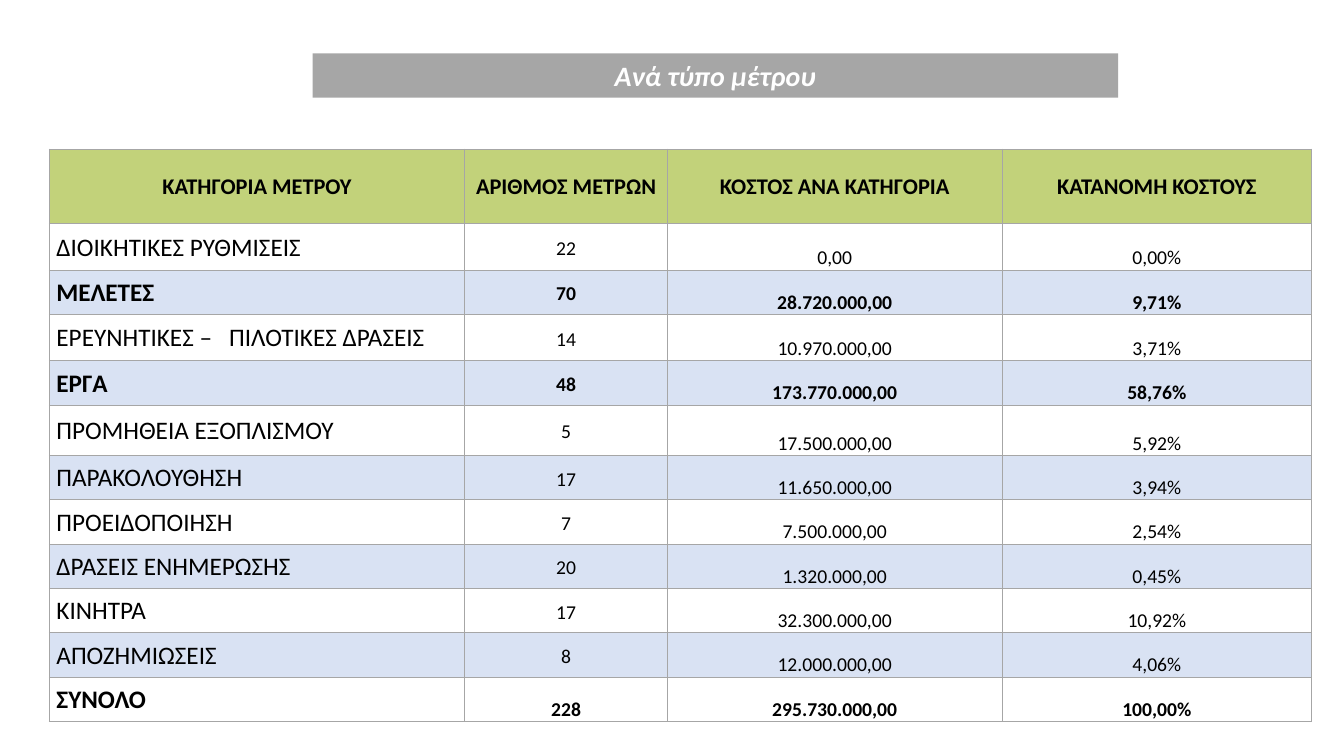
from dataclasses import dataclass

from lxml import etree
from pptx import Presentation
from pptx import util as u
from pptx.dml.color import RGBColor
from pptx.enum import text
from pptx.oxml import ns

PX = 9144  # 100 px to the inch


@dataclass(frozen=True)
class Theme:
    font: str = "Calibri"
    ink: str = "000000"
    white: str = "FFFFFF"
    grey: str = "A6A6A6"
    green: str = "8BAA00"
    blue: str = "4472C4"
    title: int = 20
    head: int = 16
    label: int = 18
    value: int = 14


@dataclass(frozen=True)
class Row:
    label: str
    count: str
    cost: str
    share: str
    high: int = 44
    bold: bool = False


@dataclass(frozen=True)
class Look:
    size: int
    bold: bool
    align: text.PP_ALIGN
    anchor: text.MSO_ANCHOR
    inset: tuple[int, int, int, int]
    loose: bool = False


THEME = Theme()
PLAIN = "{2D5ABB26-0587-4C30-8999-92F81FD0307C}"
WIDTHS = (412, 201, 332, 307)
HEADS = ("ΚΑΤΗΓΟΡΙΑ ΜΕΤΡΟΥ", "ΑΡΙΘΜΟΣ ΜΕΤΡΩΝ",
         "ΚΟΣΤΟΣ ΑΝΑ ΚΑΤΗΓΟΡΙΑ", "ΚΑΤΑΝΟΜΗ ΚΟΣΤΟΥΣ")
HEAD_HIGH = 74
GAP = "\t"  # marks a wide space inside a label
ROWS = (
    Row("ΔΙΟΙΚΗΤΙΚΕΣ ΡΥΘΜΙΣΕΙΣ", "22", "0,00", "0,00%", high=46),
    Row("ΜΕΛΕΤΕΣ", "70", "28.720.000,00", "9,71%", bold=True),
    Row("ΕΡΕΥΝΗΤΙΚΕΣ –\tΠΙΛΟΤΙΚΕΣ ΔΡΑΣΕΙΣ", "14", "10.970.000,00", "3,71%", high=46),
    Row("ΕΡΓΑ", "48", "173.770.000,00", "58,76%", bold=True),
    Row("ΠΡΟΜΗΘΕΙΑ ΕΞΟΠΛΙΣΜΟΥ", "5", "17.500.000,00", "5,92%", high=50),
    Row("ΠΑΡΑΚΟΛΟΥΘΗΣΗ", "17", "11.650.000,00", "3,94%"),
    Row("ΠΡΟΕΙΔΟΠΟΙΗΣΗ", "7", "7.500.000,00", "2,54%"),
    Row("ΔΡΑΣΕΙΣ ΕΝΗΜΕΡΩΣΗΣ", "20", "1.320.000,00", "0,45%"),
    Row("ΚΙΝΗΤΡΑ", "17", "32.300.000,00", "10,92%"),
    Row("ΑΠΟΖΗΜΙΩΣΕΙΣ", "8", "12.000.000,00", "4,06%"),
    Row("ΣΥΝΟΛΟ", "228", "295.730.000,00", "100,00%", bold=True),
)


def px(n: int) -> u.Emu:
    return u.Emu(n * PX)


def add_run(par, words: str, size: int, color: str, bold: bool, slant: bool = False):
    run = par.add_run()
    run.text = words
    font = run.font
    font.name, font.size = THEME.font, u.Pt(size)
    font.bold, font.italic = bold, slant
    font.color.rgb = RGBColor.from_string(color)
    return run


def tint(cell, color: str, alpha: int) -> None:
    cell.fill.solid()
    cell.fill.fore_color.rgb = RGBColor.from_string(color)
    tone = cell._tc.tcPr.find(".//" + ns.qn("a:srgbClr"))
    etree.SubElement(tone, ns.qn("a:alpha"), val=str(alpha * 1000))


def frame(cell) -> None:
    # Borders come before the fill in the cell properties
    props = cell._tc.get_or_add_tcPr()
    for spot, side in enumerate("LRTB"):
        line = etree.Element(ns.qn("a:ln" + side), w=str(u.Pt(1)))
        fill = etree.SubElement(line, ns.qn("a:solidFill"))
        etree.SubElement(fill, ns.qn("a:srgbClr"), val=THEME.grey)
        props.insert(spot, line)


def write(cell, words: str, look: Look) -> None:
    (cell.margin_left, cell.margin_top,
     cell.margin_right, cell.margin_bottom) = map(px, look.inset)
    cell.vertical_anchor = look.anchor
    par = cell.text_frame.paragraphs[0]
    par.alignment = look.align
    if look.loose:
        par.line_spacing = 1.15
        par.space_before = par.space_after = u.Pt(3)
    for spot, part in enumerate(words.split(GAP)):
        if spot:
            # One space, widened by letter spacing
            space = add_run(par, " ", look.size, THEME.ink, look.bold)
            space.font._element.set("spc", "810")
        add_run(par, part, look.size, THEME.ink, look.bold)


def add_title(slide, words: str) -> None:
    title = slide.shapes.title
    title.left, title.top, title.width, title.height = map(px, (310, 53, 799, 44))
    title.fill.solid()
    title.fill.fore_color.rgb = RGBColor.from_string(THEME.grey)
    body = title.text_frame
    body.auto_size = text.MSO_AUTO_SIZE.NONE
    body.word_wrap = True
    body.vertical_anchor = text.MSO_ANCHOR.TOP
    par = body.paragraphs[0]
    par.alignment = text.PP_ALIGN.CENTER
    par.line_spacing = 1.0
    par.space_before = u.Pt(0)
    add_run(par, words, THEME.title, THEME.white, True, True)


def add_costs(slide) -> None:
    highs = [HEAD_HIGH] + [row.high for row in ROWS]
    table = slide.shapes.add_table(
        len(highs), len(WIDTHS), px(49), px(148),
        px(sum(WIDTHS)), px(sum(highs))).table
    table.first_row = table.horz_banding = False
    table._tbl.tblPr.find(ns.qn("a:tableStyleId")).text = PLAIN
    for col, wide in zip(table.columns, WIDTHS):
        col.width = px(wide)
    for line, high in zip(table.rows, highs):
        line.height = px(high)

    mid, low = text.MSO_ANCHOR.MIDDLE, text.MSO_ANCHOR.BOTTOM
    left, center = text.PP_ALIGN.LEFT, text.PP_ALIGN.CENTER

    # Header row
    head = Look(THEME.head, True, center, mid, (1, 1, 1, 0))
    for col, words in enumerate(HEADS):
        cell = table.cell(0, col)
        write(cell, words, head)
        tint(cell, THEME.green, 52)
        frame(cell)

    # Body rows: every second one is tinted, the last one is the total
    for num, row in enumerate(ROWS, 1):
        label = Look(THEME.label, row.bold, left, mid, (7, 1, 1, 0))
        value = Look(THEME.value, row.bold, center, low, (7, 0, 7, 0), True)
        count = Look(THEME.value, row.bold, center, low if num == len(ROWS) else mid,
                     (7, 0, 7, 0), True)
        cells = ((row.label, label), (row.count, count),
                 (row.cost, value), (row.share, value))
        for col, (words, look) in enumerate(cells):
            cell = table.cell(num, col)
            write(cell, words, look)
            if num % 2 == 0:
                tint(cell, THEME.blue, 20)
            else:
                cell.fill.background()
            frame(cell)


def main() -> None:
    deck = Presentation()
    deck.slide_width, deck.slide_height = px(1333), px(750)
    slide = deck.slides.add_slide(deck.slide_layouts[5])
    add_title(slide, "Ανά τύπο μέτρου")
    add_costs(slide)
    deck.save("out.pptx")


if __name__ == "__main__":
    main()
